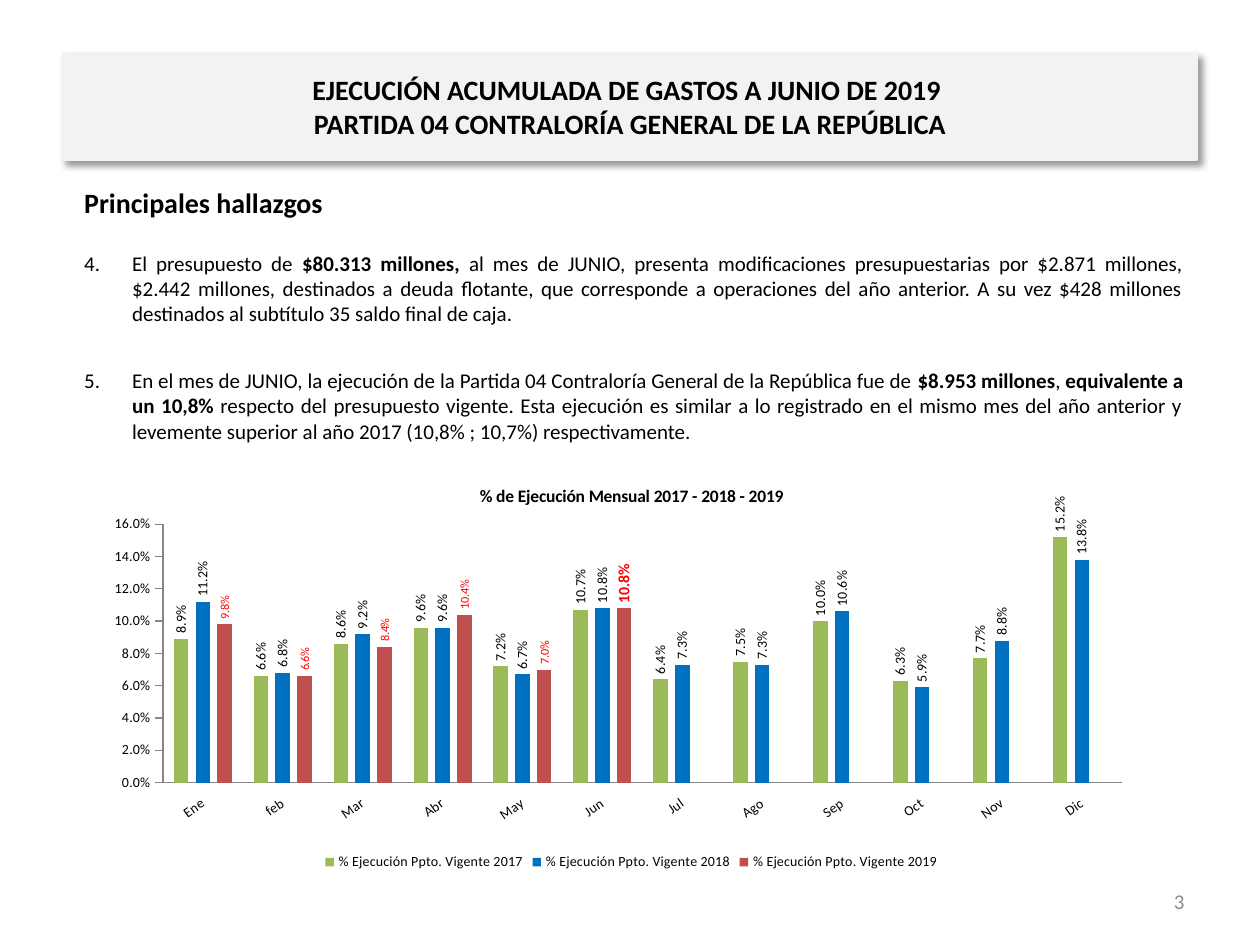
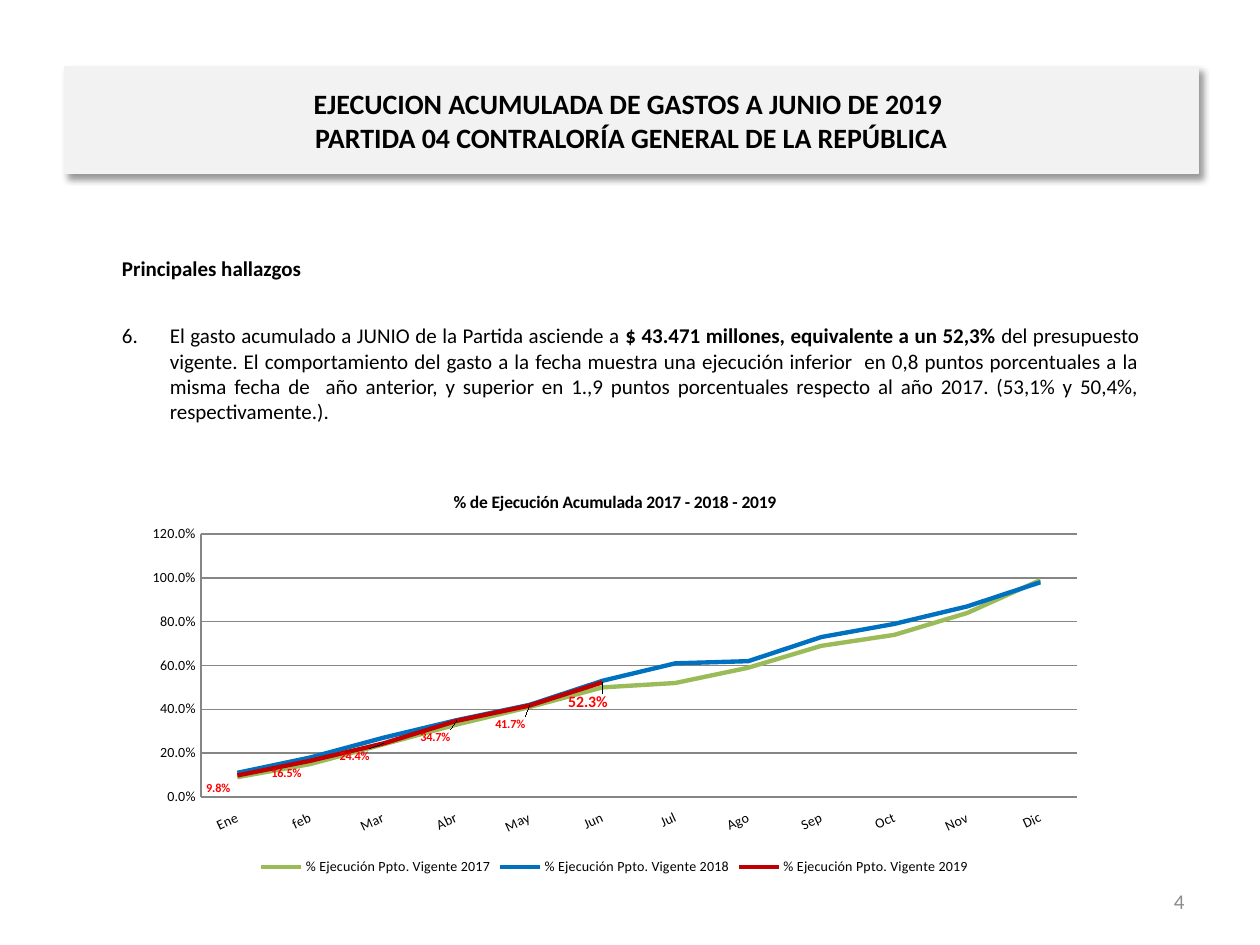
from lxml import etree
from pptx import Presentation
from pptx.chart.data import CategoryChartData
from pptx.dml.color import RGBColor
from pptx.enum.chart import XL_CHART_TYPE, XL_LABEL_POSITION, XL_LEGEND_POSITION
from pptx.enum.chart import XL_MARKER_STYLE, XL_TICK_LABEL_POSITION, XL_TICK_MARK
from pptx.enum.shapes import MSO_SHAPE
from pptx.enum.text import MSO_ANCHOR, PP_ALIGN
from pptx.oxml import parse_xml
from pptx.oxml.ns import nsdecls, qn
from pptx.util import Inches, Pt

COLUMNS, LINES = XL_CHART_TYPE.COLUMN_CLUSTERED, XL_CHART_TYPE.LINE
OUTSIDE, BELOW = XL_LABEL_POSITION.OUTSIDE_END, XL_LABEL_POSITION.BELOW
NO_TICK, TICK_OUT = XL_TICK_MARK.NONE, XL_TICK_MARK.OUTSIDE
LEFT, CENTER, RIGHT = PP_ALIGN.LEFT, PP_ALIGN.CENTER, PP_ALIGN.RIGHT
JUSTIFY, MIDDLE = PP_ALIGN.JUSTIFY, MSO_ANCHOR.MIDDLE

# Shared style
FONT = "Calibri"
BLACK, BAND, GREY, AXIS, RED = "000000", "F2F2F2", "8C8C8C", "868686", "FF0000"
GREEN, BLUE, BRICK, CRIMSON = "9BBB59", "0070C0", "C0504D", "C00000"
BAND_SIZE = (9, 0.85)
NUMBER_AREA = (7.17, 6.95, 2.33, 0.4)
PERCENT = "0.0%"

# Content: asterisks enclose bold words
MONTHS = "Ene feb Mar Abr May Jun Jul Ago Sep Oct Nov Dic".split()
YEARS = (2017, 2018, 2019)
SERIES_NAME = "% Ejecución Ppto. Vigente {}"
HEADING = "Principales hallazgos"
PARTIDA = "PARTIDA 04 CONTRALORÍA GENERAL DE LA REPÚBLICA"

PAGES = [
    {
        "number": 3,
        "title": "EJECUCIÓN ACUMULADA DE GASTOS A JUNIO DE 2019 ",
        "band_at": (0.5, 0.42),
        "text_area": (0.57, 1.42, 8.92, 2.17),
        "heading_size": 16,
        "heading_after": 6,
        "first_item": 4,
        "items": [
            "El presupuesto de *$80.313 millones,* al mes de JUNIO, presenta "
            "modificaciones presupuestarias por $2.871 millones, $2.442 millones, "
            "destinados a deuda flotante, que corresponde a operaciones del año "
            "anterior. A su vez $428 millones destinados al subtítulo 35 saldo "
            "final de caja.",
            "En el mes de JUNIO, la ejecución de la Partida 04 Contraloría General "
            "de la República fue de *$8.953 millones*, *equivalente a un 10,8%* "
            "respecto del presupuesto vigente. Esta ejecución es similar a lo "
            "registrado en el mismo mes del año anterior y levemente superior al "
            "año 2017 (10,8% ; 10,7%) respectivamente.",
        ],
        "chart": {
            "type": COLUMNS,
            "area": (0.91, 3.7, 8.19, 3.25),
            "title": "% de Ejecución Mensual 2017 - 2018 - 2019",
            "colors": (GREEN, BLUE, BRICK),
            "values": [
                (.089, .066, .086, .096, .072, .107, .064, .075, .1, .063, .077, .152),
                (.112, .068, .092, .096, .067, .108, .073, .073, .106, .059, .088, .138),
                (.098, .066, .084, .104, .07, .108),
            ],
            "scale": (0.16, 0.02),
            "plot": (0.045, 0.142, 0.931, 0.631),
            "month_angle": -35,
        },
    },
    {
        "number": 4,
        "title": "EJECUCION ACUMULADA DE GASTOS A JUNIO DE 2019 ",
        "band_at": (0.51, 0.53),
        "text_area": (0.87, 1.98, 8.27, 1.45),
        "heading_size": 12,
        "heading_after": 12,
        "first_item": 6,
        "items": [
            "El gasto acumulado a JUNIO de la Partida asciende a *$ 43.471 millones, "
            "equivalente a un 52,3% *del presupuesto vigente. El comportamiento del "
            "gasto a la fecha muestra una ejecución inferior  en 0,8 puntos "
            "porcentuales a la misma fecha de  año anterior, y superior en 1.,9 "
            "puntos porcentuales respecto al año 2017. (53,1% y 50,4%, "
            "respectivamente.).",
        ],
        "chart": {
            "type": LINES,
            "area": (1.06, 3.75, 7.64, 3.24),
            "title": "% de Ejecución Acumulada 2017 - 2018 - 2019",
            "colors": (GREEN, BLUE, CRIMSON),
            "values": [
                (.09, .15, .24, .33, .41, .5, .52, .59, .69, .74, .84, .99),
                (.11, .18, .27, .35, .42, .53, .61, .62, .73, .79, .87, .98),
                (.098, .165, .244, .347, .417, .523),
            ],
            "scale": (1.2, 0.2),
            "plot": (0.07, 0.151, 0.91, 0.644),
            "month_angle": -25,
            # Label shifts as shares of the chart, January to June
            "shifts": [(-.02, 0), (-.025, 0), (-.03, 0),
                       (-.022, .01), (-.02, .015), (-.015, .015)],
        },
    },
]


def rgb(code):
    return RGBColor.from_string(code)


def inches(values):
    return [Inches(value) for value in values]


def set_font(font, size, color=BLACK, bold=False):
    font.name, font.size, font.bold = FONT, Pt(size), bold
    font.color.rgb = rgb(color)


# Text parts
def add_band(page, data):
    band = page.shapes.add_shape(MSO_SHAPE.RECTANGLE, *inches(data["band_at"] + BAND_SIZE))
    band.fill.solid()
    band.fill.fore_color.rgb = band.line.color.rgb = rgb(BAND)
    band.line.width = Pt(0.75)
    band.shadow.inherit = False
    effects = band._element.spPr.find(qn("a:effectLst"))
    effects.append(parse_xml(
        f'<a:outerShdw {nsdecls("a")} blurRad="{Pt(4)}" dist="{Pt(3)}" dir="2700000" '
        'algn="tl" rotWithShape="0"><a:srgbClr val="000000"><a:alpha val="40000"/>'
        '</a:srgbClr></a:outerShdw>'))
    frame = band.text_frame
    frame.word_wrap, frame.vertical_anchor = True, MIDDLE
    para = frame.paragraphs[0]
    para.text = data["title"] + "\v" + PARTIDA
    para.alignment = CENTER
    set_font(para.font, 16, bold=True)


def add_findings(page, data):
    box = page.shapes.add_textbox(*inches(data["text_area"]))
    frame = box.text_frame
    frame.word_wrap = True
    para = frame.paragraphs[0]
    para.text, para.alignment = HEADING, JUSTIFY
    para.space_after = Pt(data["heading_after"])
    set_font(para.font, data["heading_size"], bold=True)
    for item in data["items"]:
        para = frame.add_paragraph()
        para.alignment = JUSTIFY
        para.space_before = para.space_after = Pt(12)
        props = para._p.get_or_add_pPr()
        props.set("marL", str(Inches(0.38)))
        props.set("indent", str(-Inches(0.38)))
        etree.SubElement(props, qn("a:buFont"), typeface="+mj-lt")
        etree.SubElement(props, qn("a:buAutoNum"), type="arabicPeriod",
                         startAt=str(data["first_item"]))
        set_font(para.font, 12)
        for index, words in enumerate(item.split("*")):
            span = para.add_run()
            span.text, span.font.bold = words, index % 2 == 1


def add_page_number(page, number):
    frame = page.shapes.add_textbox(*inches(NUMBER_AREA)).text_frame
    frame.word_wrap, frame.vertical_anchor = True, MIDDLE
    para = frame.paragraphs[0]
    para.text, para.alignment = str(number), RIGHT
    set_font(para.font, 12, GREY)


# Chart parts
def manual_layout(x, y, size=None):
    """Inner plot area when a size is given, otherwise a label shift."""
    parts = [("x", x), ("y", y)]
    if size:
        parts = [("layoutTarget", "inner"), ("xMode", "edge"), ("yMode", "edge"),
                 *parts, ("w", size[0]), ("h", size[1])]
    inner = "".join(f'<c:{tag} val="{value}"/>' for tag, value in parts)
    return parse_xml(f'<c:layout {nsdecls("c")}><c:manualLayout>{inner}'
                     '</c:manualLayout></c:layout>')


def turn(chart, where, degrees):
    for body in chart._chartSpace.xpath(f".//{where}//a:bodyPr"):
        body.set("rot", str(degrees * 60000))
        body.set("vert", "horz")


def add_labels(series, size, color, position, bold=False):
    labels = series.data_labels
    labels.show_value, labels.position = True, position
    labels.number_format, labels.number_format_is_linked = PERCENT, False
    set_font(labels.font, size, color, bold)


def style_axes(chart, spec):
    months, scale = chart.category_axis, chart.value_axis
    is_lines = spec["type"] == LINES
    for axis in (months, scale):
        set_font(axis.tick_labels.font, 8)
        axis.format.line.color.rgb = rgb(AXIS)
        axis.format.line.width = Pt(0.75)
        axis.major_tick_mark = axis.minor_tick_mark = NO_TICK
    months.tick_label_position = XL_TICK_LABEL_POSITION.LOW
    scale.minimum_scale = 0
    scale.maximum_scale, scale.major_unit = spec["scale"]
    scale.tick_labels.number_format = PERCENT
    scale.tick_labels.number_format_is_linked = False
    scale.has_major_gridlines = is_lines
    if is_lines:
        scale.major_gridlines.format.line.color.rgb = rgb(AXIS)
    else:
        scale.major_tick_mark = TICK_OUT
    turn(chart, "c:catAx", spec["month_angle"])


def style_columns(chart, spec):
    plot = chart.plots[0]
    plot.gap_width, plot.overlap = 150, -49
    for series, color in zip(plot.series, spec["colors"]):
        series.invert_if_negative = False
        series.format.fill.solid()
        series.format.fill.fore_color.rgb = rgb(color)
        is_current = color == BRICK
        add_labels(series, 7 if is_current else 8, RED if is_current else BLACK, OUTSIDE)
    june = plot.series[-1].points[5].data_label
    set_font(june.font, 9, RED, True)
    june.position = OUTSIDE
    turn(chart, "c:dLbls", -90)


def style_lines(chart, spec):
    plot = chart.plots[0]
    for series, color in zip(plot.series, spec["colors"]):
        series.smooth = False
        series.marker.style = XL_MARKER_STYLE.NONE
        series.format.line.color.rgb = rgb(color)
        series.format.line.width = Pt(2.5)
    current = plot.series[-1]
    add_labels(current, 7, RED, BELOW, True)
    for index, shift in enumerate(spec["shifts"]):
        label = current.points[index].data_label
        set_font(label.font, 9 if MONTHS[index] == "Jun" else 7, RED, True)
        label.position = BELOW
        label._dLbl.insert(1, manual_layout(*shift))


def add_execution_chart(page, spec):
    data = CategoryChartData(number_format=PERCENT)
    data.categories = MONTHS
    for year, values in zip(YEARS, spec["values"]):
        missing = [None] * (len(MONTHS) - len(values))
        data.add_series(SERIES_NAME.format(year), list(values) + missing)
    chart = page.shapes.add_chart(spec["type"], *inches(spec["area"]), data).chart
    set_font(chart.font, 10)
    chart.has_title = True
    para = chart.chart_title.text_frame.paragraphs[0]
    para.text = spec["title"]
    set_font(para.font, 10, bold=True)
    chart.chart_title.include_in_layout = False
    chart.has_legend = True
    chart.legend.position = XL_LEGEND_POSITION.BOTTOM
    chart.legend.include_in_layout = False
    set_font(chart.legend.font, 8)
    chart.plots[0].vary_by_categories = False
    style_axes(chart, spec)
    (style_lines if spec["type"] == LINES else style_columns)(chart, spec)
    area = chart._chartSpace.chart.plotArea
    for old in area.findall(qn("c:layout")):
        area.remove(old)
    x, y, *size = spec["plot"]
    area.insert(0, manual_layout(x, y, size))


def main():
    deck = Presentation()
    deck.slide_width, deck.slide_height = Inches(10), Inches(7.5)
    for data in PAGES:
        page = deck.slides.add_slide(deck.slide_layouts[6])
        add_page_number(page, data["number"])
        add_band(page, data)
        add_findings(page, data)
        add_execution_chart(page, data["chart"])
    deck.save("out.pptx")


if __name__ == "__main__":
    main()
